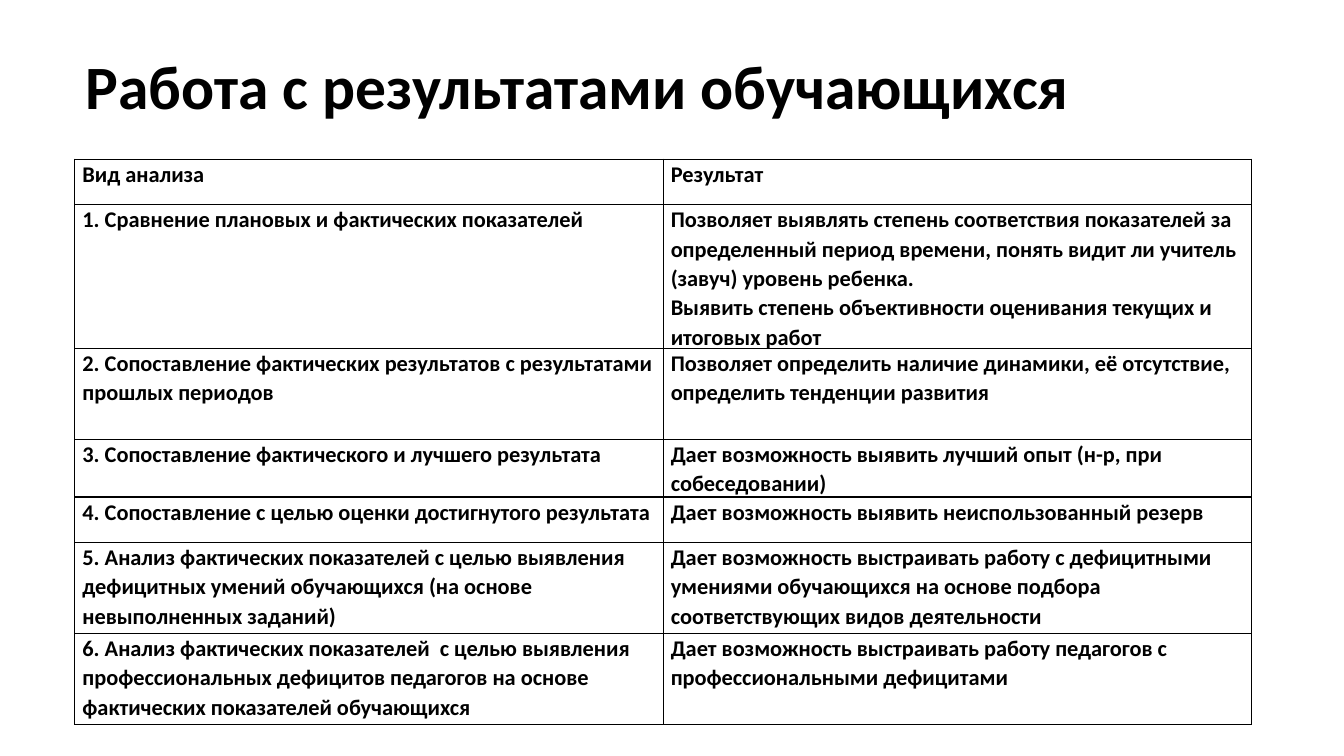
from dataclasses import dataclass

from lxml.etree import SubElement
from pptx import Presentation
from pptx.dml.color import RGBColor
from pptx.enum.text import MSO_ANCHOR as Anchor
from pptx.oxml.ns import qn
from pptx.util import Pt


@dataclass(frozen=True)
class Theme:
    font: str = "Calibri"
    ink: str = "000000"
    title_size: float = 44
    table_size: float = 16
    border: float = 1


THEME = Theme()

TITLE = "Работа с результатами обучающихся"

# Row height, kind of analysis, result
ROWS = [
    (32.5, "Вид анализа", "Результат"),
    (67, "1. Сравнение плановых и фактических показателей",
     "Позволяет выявлять степень соответствия показателей за определенный период "
     "времени, понять видит ли учитель (завуч) уровень ребенка.\n"
     "Выявить степень объективности оценивания текущих и итоговых работ"),
    (65, "2. Сопоставление фактических результатов с результатами прошлых периодов",
     "Позволяет определить наличие динамики, её отсутствие, "
     "определить тенденции развития"),
    (32.5, "3. Сопоставление фактического и лучшего результата",
     "Дает возможность выявить лучший опыт (н-р, при собеседовании)"),
    (32.5, "4. Сопоставление с целью оценки достигнутого результата",
     "Дает возможность выявить неиспользованный резерв"),
    (65, "5. Анализ фактических показателей с целью выявления дефицитных умений "
     "обучающихся (на основе невыполненных заданий)",
     "Дает возможность выстраивать работу с дефицитными умениями обучающихся "
     "на основе подбора соответствующих видов деятельности"),
    (65, "6. Анализ фактических показателей  с целью выявления профессиональных "
     "дефицитов педагогов на основе фактических показателей обучающихся",
     "Дает возможность выстраивать работу педагогов с профессиональными дефицитами"),
]


def write_text(frame, text, size, line_spacing):
    frame.text = text
    frame.word_wrap = True
    for paragraph in frame.paragraphs:
        paragraph.line_spacing = line_spacing
        font = paragraph.font
        font.name, font.size, font.bold = THEME.font, Pt(size), True
        font.color.rgb = RGBColor.from_string(THEME.ink)


def add_borders(cell):
    properties = cell._tc.get_or_add_tcPr()
    for index, side in enumerate(("lnL", "lnR", "lnT", "lnB")):
        line = properties.makeelement(qn(f"a:{side}"), {"w": str(Pt(THEME.border))})
        fill = SubElement(line, qn("a:solidFill"))
        SubElement(fill, qn("a:srgbClr"), val=THEME.ink)
        properties.insert(index, line)


def add_title(slide, left, top, width, height):
    box = slide.shapes.add_textbox(Pt(left), Pt(top), Pt(width), Pt(height))
    box.text_frame.vertical_anchor = Anchor.MIDDLE
    write_text(box.text_frame, TITLE, THEME.title_size, 0.9)


def add_analysis_table(slide, left, top, width):
    total_height = sum(height for height, *_ in ROWS)
    table = slide.shapes.add_table(
        len(ROWS), 2, Pt(left), Pt(top), Pt(width), Pt(total_height)).table
    table.first_row = table.horz_banding = False

    for row, (height, *texts) in zip(table.rows, ROWS):
        row.height = Pt(height)
        for cell, text in zip(row.cells, texts):
            cell.margin_left = cell.margin_right = Pt(5.4)
            cell.margin_top = cell.margin_bottom = 0
            cell.fill.background()
            write_text(cell.text_frame, text, THEME.table_size, 1.07)
            add_borders(cell)


def main():
    presentation = Presentation()
    presentation.slide_width, presentation.slide_height = Pt(960), Pt(540)
    slide = presentation.slides.add_slide(presentation.slide_layouts[6])

    add_title(slide, left=54, top=29, width=840, height=70)
    add_analysis_table(slide, left=53.5, top=113.75, width=840.5)

    presentation.save("out.pptx")


if __name__ == "__main__":
    main()
